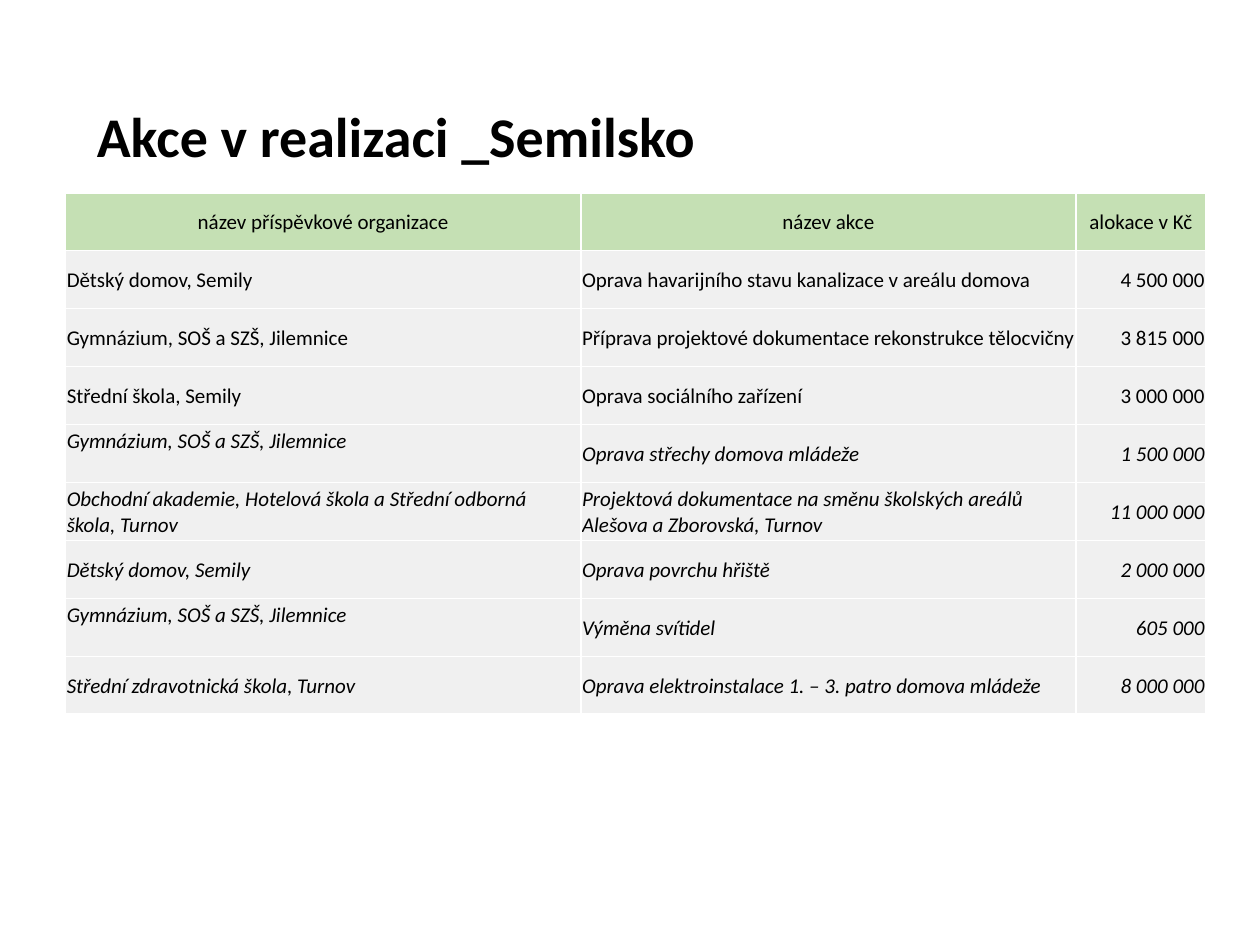
from dataclasses import dataclass

from lxml import etree
from pptx import Presentation
from pptx.dml.color import RGBColor
from pptx.enum.text import MSO_ANCHOR, MSO_AUTO_SIZE, PP_ALIGN
from pptx.oxml.ns import qn
from pptx.util import Inches, Pt

LEFT, CENTER, RIGHT = PP_ALIGN.LEFT, PP_ALIGN.CENTER, PP_ALIGN.RIGHT
TOP, MIDDLE = MSO_ANCHOR.TOP, MSO_ANCHOR.MIDDLE
FIT_SHAPE = MSO_AUTO_SIZE.SHAPE_TO_FIT_TEXT


@dataclass(frozen=True)
class Theme:
    """Colours, font and type sizes of the slide."""
    font: str = "Calibri"
    text: str = "000000"
    header: str = "C5E0B4"
    body: str = "F0F0F0"
    border: str = "FFFFFF"
    title_size: int = 32
    table_size: int = 12


THEME = Theme()
HEADERS = ("název příspěvkové organizace", "název akce", "alokace v Kč")
REGULAR_ROWS = (
    ("Dětský domov, Semily", "Oprava havarijního stavu kanalizace v areálu domova", "4 500 000"),
    ("Gymnázium, SOŠ a SZŠ, Jilemnice",
     "Příprava projektové dokumentace rekonstrukce tělocvičny", "3 815 000"),
    ("Střední škola, Semily", "Oprava sociálního zařízení", "3 000 000"),
)
ITALIC_ROWS = (
    ("Gymnázium, SOŠ a SZŠ, Jilemnice", "Oprava střechy domova mládeže", "1 500 000"),
    ("Obchodní akademie, Hotelová škola a Střední odborná škola, Turnov",
     "Projektová dokumentace na směnu školských areálů Alešova a Zborovská, Turnov",
     "11 000 000"),
    ("Dětský domov, Semily", "Oprava povrchu hřiště", "2 000 000"),
    ("Gymnázium, SOŠ a SZŠ, Jilemnice", "Výměna svítidel", "605 000"),
    ("Střední zdravotnická škola, Turnov",
     "Oprava elektroinstalace 1. – 3. patro domova mládeže", "8 000 000"),
)
COLUMN_WIDTHS = (4.09, 3.93, 1.03)
ALIGNMENTS = (LEFT, LEFT, RIGHT)
TOP_CELLS = {(4, 0), (7, 0)}


def style_paragraph(para, size, bold=False, italic=False):
    """Set the font of a whole paragraph."""
    font = para.font
    font.name, font.size = THEME.font, Pt(size)
    font.bold, font.italic = bold, italic
    font.color.rgb = RGBColor.from_string(THEME.text)


def add_title(page, text, left, top, width, height):
    """Place the slide title in the given box."""
    box = page.shapes.add_textbox(left, top, width, height)
    frame = box.text_frame
    frame.word_wrap = True
    frame.auto_size = FIT_SHAPE
    frame.text = text
    style_paragraph(frame.paragraphs[0], THEME.title_size, bold=True)


def add_borders(cell):
    """Draw a thin line on all four sides of a cell."""
    properties = cell._tc.get_or_add_tcPr()
    for side in ("lnL", "lnR", "lnT", "lnB"):
        line = etree.SubElement(properties, qn(f"a:{side}"), w=str(Pt(1)))
        fill = etree.SubElement(line, qn("a:solidFill"))
        etree.SubElement(fill, qn("a:srgbClr"), val=THEME.border)


def fill_cell(cell, text, color, align, anchor=MIDDLE, italic=False):
    """Write and style one table cell."""
    add_borders(cell)
    cell.fill.solid()
    cell.fill.fore_color.rgb = RGBColor.from_string(color)
    cell.margin_left = cell.margin_right = Inches(0.01)
    cell.margin_top = Inches(0.03 if anchor == TOP else 0.01)
    cell.margin_bottom = 0
    cell.vertical_anchor = anchor
    cell.text = text
    para = cell.text_frame.paragraphs[0]
    para.alignment = align
    style_paragraph(para, THEME.table_size, italic=italic)


def add_projects(page, left, top, width, height):
    """Place the table of projects in the given box."""
    rows = REGULAR_ROWS + ITALIC_ROWS
    table = page.shapes.add_table(len(rows) + 1, len(HEADERS), left, top, width, height).table
    for column, column_width in zip(table.columns, COLUMN_WIDTHS):
        column.width = Inches(column_width)
    for index, header in enumerate(HEADERS):
        fill_cell(table.cell(0, index), header, THEME.header, CENTER)
    for row_index, row in enumerate(rows, start=1):
        italic = row_index > len(REGULAR_ROWS)
        for index, text in enumerate(row):
            anchor = TOP if (row_index, index) in TOP_CELLS else MIDDLE
            fill_cell(table.cell(row_index, index), text, THEME.body,
                      ALIGNMENTS[index], anchor, italic)


def main():
    """Build and save the deck."""
    deck = Presentation()
    deck.slide_width, deck.slide_height = Inches(10), Inches(7.5)
    page = deck.slides.add_slide(deck.slide_layouts[6])
    add_title(page, "Akce v realizaci _Semilsko",
              Inches(0.67), Inches(0.76), Inches(8.35), Inches(0.64))
    add_projects(page, Inches(0.52), Inches(1.53), Inches(9.05), Inches(4.14))
    deck.save("out.pptx")


if __name__ == "__main__":
    main()
